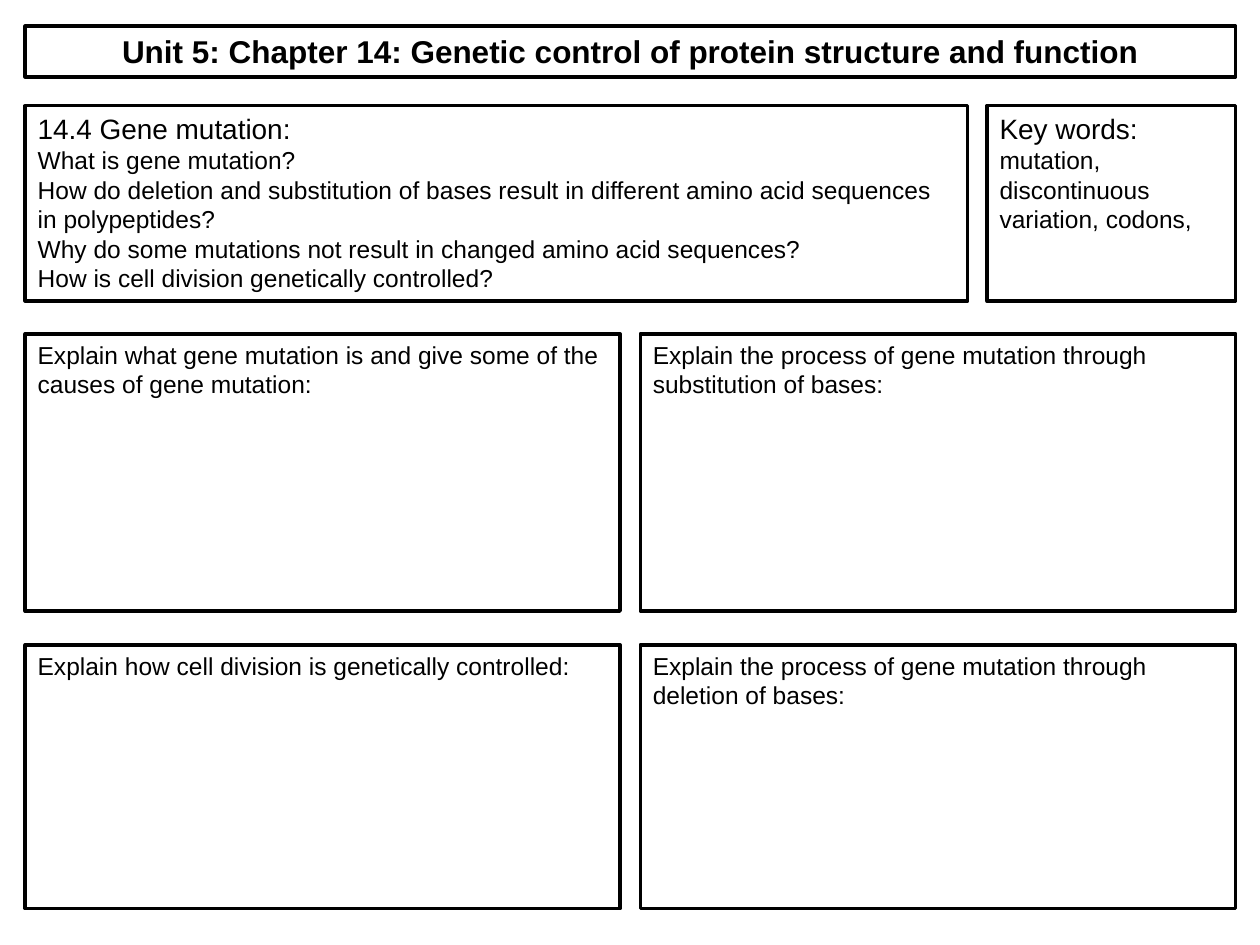
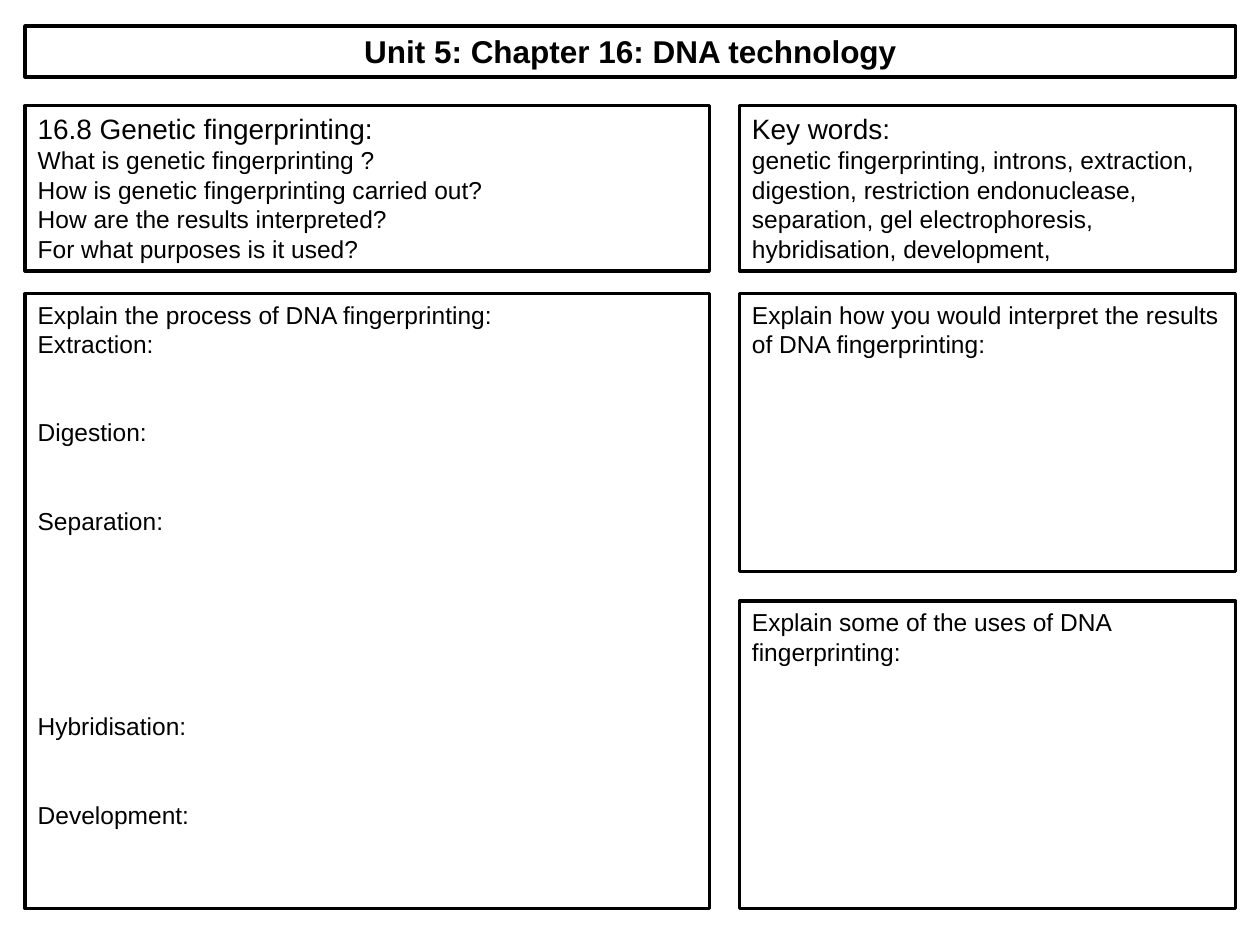
import pptx
import pptx.dml.color
import pptx.enum.shapes
import pptx.enum.text
import pptx.util

COLOURS = {"paper": "FFFFFF", "ink": "000000"}
FONT = "Arial"
TITLE_SIZE, HEADING_SIZE, BODY_SIZE = 18, 16, 14
LINE_PITCH = 16.8  # points taken by one line of body text

# Shared page frame, in centimetres
LEFT, RIGHT = 0.51, 24.91
TITLE_TOP, TITLE_HEIGHT = 0.53, 1.02
INTRO_TOP = 2.13
BOTTOM = 18.32


class Worksheet:
    """Holds the style and the slide being filled."""

    def __init__(self, presentation):
        self.presentation = presentation
        self.slide = None

    def colour(self, name):
        return pptx.dml.color.RGBColor.from_string(COLOURS[name])

    def new_slide(self, title):
        layout = self.presentation.slide_layouts[6]
        self.slide = self.presentation.slides.add_slide(layout)
        frame = self.box(LEFT, TITLE_TOP, RIGHT, TITLE_TOP + TITLE_HEIGHT, [title])
        paragraph = frame.paragraphs[0]
        paragraph.alignment = pptx.enum.text.PP_ALIGN.CENTER
        paragraph.font.size = pptx.util.Pt(TITLE_SIZE)
        paragraph.font.bold = True

    def box(self, left, top, right, bottom, lines):
        """Outlined box with one paragraph of body text per line."""
        edges = [pptx.util.Cm(length) for length in (left, top, right - left, bottom - top)]
        shape = self.slide.shapes.add_shape(pptx.enum.shapes.MSO_SHAPE.RECTANGLE, *edges)
        shape.shadow.inherit = False
        shape.fill.solid()
        shape.fill.fore_color.rgb = self.colour("paper")
        shape.line.color.rgb = self.colour("ink")
        shape.line.width = pptx.util.Pt(2)
        frame = shape.text_frame
        frame.word_wrap = True
        frame.vertical_anchor = pptx.enum.text.MSO_ANCHOR.TOP
        frame.text = "\n".join(lines)
        for paragraph in frame.paragraphs:
            paragraph.alignment = pptx.enum.text.PP_ALIGN.LEFT
            paragraph.font.name = FONT
            paragraph.font.size = pptx.util.Pt(BODY_SIZE)
            paragraph.font.color.rgb = self.colour("ink")
        return frame

    def headed_box(self, left, right, bottom, lines):
        """Introductory box whose first line is a heading."""
        frame = self.box(left, INTRO_TOP, right, bottom, lines)
        frame.paragraphs[0].font.size = pptx.util.Pt(HEADING_SIZE)

    def steps_box(self, left, top, right, bottom, prompt, steps):
        """Prompt and steps, each step after a number of free writing lines."""
        frame = self.box(left, top, right, bottom, [prompt] + [step for step, _ in steps])
        for paragraph, (_, free_lines) in zip(frame.paragraphs[1:], steps):
            paragraph.space_before = pptx.util.Pt(free_lines * LINE_PITCH)


def gene_mutation(sheet):
    sheet.new_slide("Unit 5: Chapter 14: Genetic control of protein structure and function")

    # Questions and key words
    intro_bottom = 6.07
    sheet.headed_box(LEFT, 19.51, intro_bottom, [
        "14.4 Gene mutation:",
        "What is gene mutation?",
        "How do deletion and substitution of bases result in different "
        "amino acid sequences in polypeptides?",
        "Why do some mutations not result in changed amino acid sequences?",
        "How is cell division genetically controlled?",
    ])
    sheet.headed_box(19.9, RIGHT, intro_bottom, [
        "Key words:", "mutation, discontinuous variation, codons,"])

    # Two by two grid of answer boxes
    columns = [(LEFT, 12.5), (12.91, RIGHT)]
    rows = [(6.73, 12.32), (13, BOTTOM)]
    prompts = [
        ["Explain what gene mutation is and give some of the causes of gene mutation:",
         "Explain the process of gene mutation through substitution of bases:"],
        ["Explain how cell division is genetically controlled:",
         "Explain the process of gene mutation through deletion of bases:"],
    ]
    for (top, bottom), row_prompts in zip(rows, prompts):
        for (left, right), prompt in zip(columns, row_prompts):
            sheet.box(left, top, right, bottom, [prompt])


def genetic_fingerprinting(sheet):
    sheet.new_slide("Unit 5: Chapter 16: DNA technology")
    column_end, column_start = 14.3, 14.91

    # Questions and key words
    intro_bottom = 5.46
    sheet.headed_box(LEFT, column_end, intro_bottom, [
        "16.8 Genetic fingerprinting:",
        "What is genetic fingerprinting ?",
        "How is genetic fingerprinting carried out?",
        "How are the results interpreted?",
        "For what purposes is it used?",
    ])
    sheet.headed_box(column_start, RIGHT, intro_bottom, [
        "Key words:",
        "genetic fingerprinting, introns, extraction, digestion, restriction endonuclease, "
        "separation, gel electrophoresis, hybridisation, development,",
    ])

    # Answer boxes
    answers_top = 5.92
    sheet.steps_box(LEFT, answers_top, column_end, BOTTOM,
                    "Explain the process of DNA fingerprinting:",
                    [("Extraction:", 0), ("Digestion:", 2), ("Separation:", 2),
                     ("Hybridisation:", 6), ("Development:", 2)])
    sheet.box(column_start, answers_top, RIGHT, 11.52,
              ["Explain how you would interpret the results of DNA fingerprinting:"])
    sheet.box(column_start, 12.12, RIGHT, BOTTOM,
              ["Explain some of the uses of DNA fingerprinting:"])


def main():
    presentation = pptx.Presentation()
    presentation.slide_width = pptx.util.Cm(25.4)
    presentation.slide_height = pptx.util.Cm(19.05)
    sheet = Worksheet(presentation)
    gene_mutation(sheet)
    genetic_fingerprinting(sheet)
    presentation.save("out.pptx")


if __name__ == "__main__":
    main()
